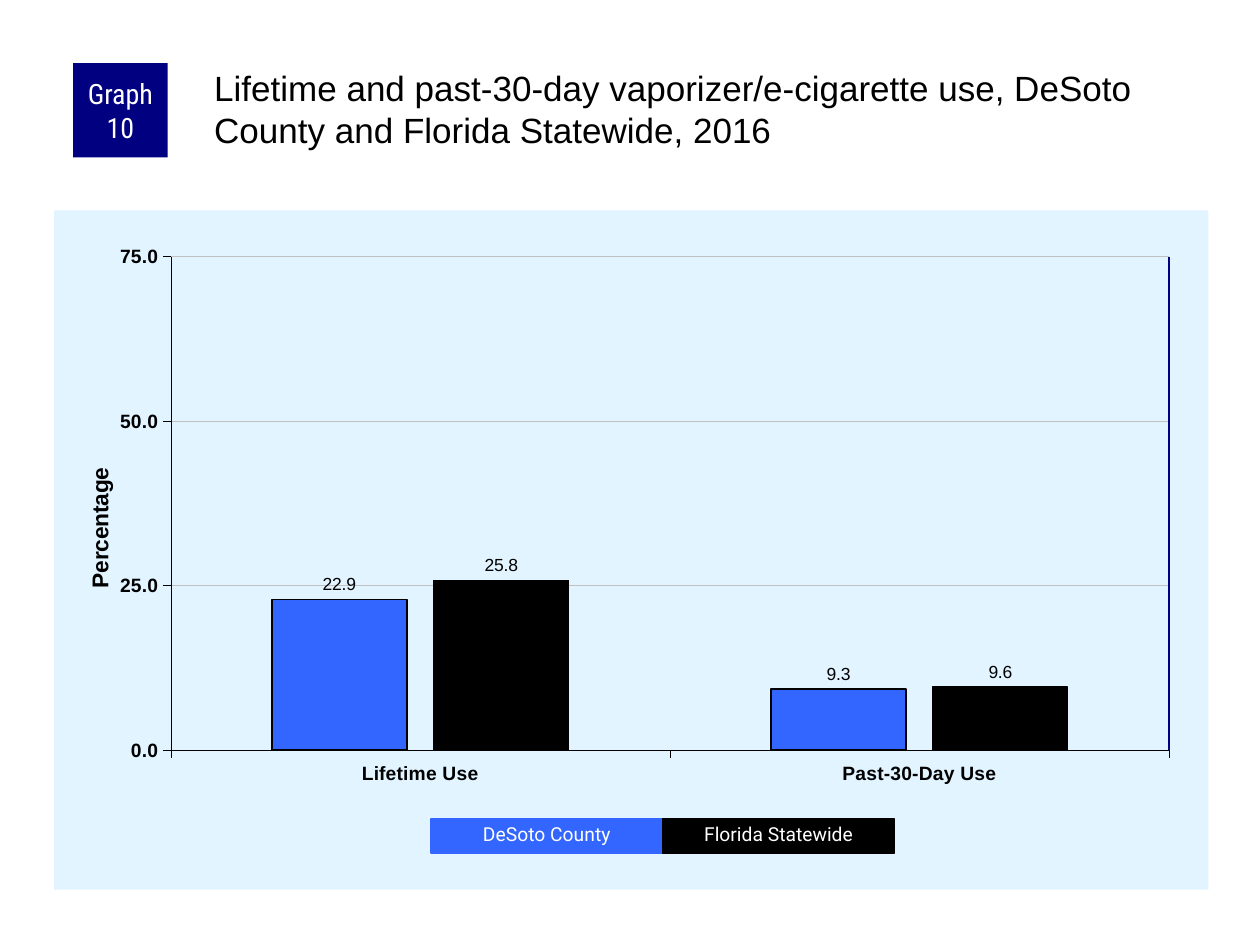
from pptx import Presentation
from pptx.chart.data import CategoryChartData
from pptx.dml.color import RGBColor
from pptx.enum.chart import XL_CHART_TYPE as ChartType, XL_LABEL_POSITION as LabelPos
from pptx.enum.chart import XL_TICK_MARK as Tick
from pptx.enum.shapes import MSO_CONNECTOR as Connector, MSO_SHAPE as Shape
from pptx.enum.text import MSO_ANCHOR as Anchor, PP_ALIGN as Align
from pptx.oxml import parse_xml
from pptx.oxml.ns import nsdecls, qn
from pptx.util import Inches, Pt

NAVY, BLUE, BLACK, WHITE = "000080", "3366FF", "000000", "FFFFFF"
PALE, GRAY = "E1F4FF", "C0C0C0"
SERIES = [
    ("DeSoto County", (22.9, 9.3), BLUE, 1),
    ("Florida Statewide", (25.8, 9.6), BLACK, 0.75),
]
CHART_BOX = (0.43, 1.67, 9.16, 5.39)
PLOT = (0.101, 0.068, 0.865, 0.727)


def rgb(color):
    return RGBColor.from_string(color)


def set_fill(fill, color):
    fill.solid()
    fill.fore_color.rgb = rgb(color)


def set_line(line, color, width):
    line.color.rgb = rgb(color)
    line.width = Pt(width)


def set_font(font, size, color=BLACK, name="Arial", bold=False):
    font.size, font.name, font.bold = Pt(size), name, bold
    font.color.rgb = rgb(color)


def write(sp, text, size, color=BLACK, name="Arial", align=Align.LEFT,
          anchor=Anchor.TOP, insets=(0.1, 0.05, 0.1, 0.05), spacing=None):
    tf = sp.text_frame
    tf.word_wrap = True
    tf.vertical_anchor = anchor
    (tf.margin_left, tf.margin_top,
     tf.margin_right, tf.margin_bottom) = map(Inches, insets)
    p = tf.paragraphs[0]
    p.alignment, p.line_spacing = align, spacing
    r = p.add_run()
    r.text = text
    set_font(r.font, size, color, name)


def add_box(slide, box, fill, line=None):
    sp = slide.shapes.add_shape(Shape.RECTANGLE, *map(Inches, box))
    sp.shadow.inherit = False
    set_fill(sp.fill, fill)
    if line:
        set_line(sp.line, line, 0.75)
    else:
        sp.line.fill.background()
    return sp


def add_line(slide, start, end, color, width):
    line = slide.shapes.add_connector(
        Connector.STRAIGHT, *map(Inches, (*start, *end)))
    set_line(line.line, color, width)
    line._element.spPr.append(parse_xml(f"<a:effectLst {nsdecls('a')}/>"))


def layout_xml(x, y, size=None):
    """Manual layout in fractions of the chart; a size makes it the inner plot."""
    target = '<c:layoutTarget val="inner"/>' if size else ""
    extent = f'<c:w val="{size[0]}"/><c:h val="{size[1]}"/>' if size else ""
    return parse_xml(
        f"<c:layout {nsdecls('c')}><c:manualLayout>{target}"
        f'<c:xMode val="edge"/><c:yMode val="edge"/>'
        f'<c:x val="{x}"/><c:y val="{y}"/>{extent}</c:manualLayout></c:layout>')


def replace_layout(parent, layout, index):
    for old in parent.findall(qn("c:layout")):
        parent.remove(old)
    parent.insert(index, layout)


def style_axis(axis):
    axis.major_tick_mark, axis.minor_tick_mark = Tick.OUTSIDE, Tick.NONE
    set_font(axis.tick_labels.font, 11, bold=True)
    set_line(axis.format.line, BLACK, 0.25)


def style_value_axis(axis):
    style_axis(axis)
    axis.minimum_scale, axis.maximum_scale, axis.major_unit = 0, 75, 25
    axis.has_major_gridlines = True
    set_line(axis.major_gridlines.format.line, GRAY, 0.25)
    title = axis.axis_title
    p = title.text_frame.paragraphs[0]
    r = p.add_run()
    r.text = "Percentage"
    set_font(r.font, 13, bold=True)
    title._element.find(".//" + qn("a:bodyPr")).set("rot", "-5400000")
    replace_layout(title._element, layout_xml(0.024, 0.373), 1)


def style_series(series, color, width):
    set_fill(series.format.fill, color)
    set_line(series.format.line, BLACK, width)
    series.invert_if_negative = False
    labels = series.data_labels
    labels.show_value = True
    labels.position = LabelPos.OUTSIDE_END
    labels.number_format, labels.number_format_is_linked = "0.0", False
    set_font(labels.font, 10)


def add_usage_chart(slide):
    data = CategoryChartData(number_format="0.0")
    data.categories = ["Lifetime Use", "Past-30-Day Use"]
    for name, values, *_ in SERIES:
        data.add_series(name, values)
    chart = slide.shapes.add_chart(
        ChartType.COLUMN_CLUSTERED, *map(Inches, CHART_BOX), data).chart
    chart.has_legend = chart.has_title = False
    set_font(chart.font, 11.5)

    plot = chart.plots[0]
    plot.gap_width, plot.overlap, plot.vary_by_categories = 150, -20, False
    for series, (_, _, color, width) in zip(plot.series, SERIES):
        style_series(series, color, width)
    style_axis(chart.category_axis)
    style_value_axis(chart.value_axis)

    root = chart._chartSpace
    replace_layout(root.chart.plotArea, layout_xml(*PLOT[:2], PLOT[2:]), 0)
    root.chart.addnext(parse_xml(
        f"<c:spPr {nsdecls('c', 'a')}><a:solidFill><a:srgbClr val=\"{PALE}\"/>"
        "</a:solidFill><a:ln><a:noFill/></a:ln></c:spPr>"))


def add_right_edge(slide):
    """Navy line closing the plot area on its right side."""
    left, top, width, height = CHART_BOX
    x = left + (PLOT[0] + PLOT[2]) * width
    y = top + PLOT[1] * height
    add_line(slide, (x, y), (x, y + PLOT[3] * height), NAVY, 1.5)


def add_legend(slide):
    width = 1.84
    for i, (name, _, color, _) in enumerate(SERIES):
        sp = add_box(slide, (3.42 + i * width, 6.5, width, 0.27), color, color)
        write(sp, name, 11, WHITE, "Roboto", align=Align.CENTER, spacing=0.9)


def main():
    prs = Presentation()
    prs.slide_width, prs.slide_height = Inches(10), Inches(7.5)
    slide = prs.slides.add_slide(prs.slide_layouts[6])

    add_usage_chart(slide)
    add_right_edge(slide)
    badge = add_box(slide, (0.58, 0.5, 0.75, 0.75), NAVY)
    write(badge, "Graph 10", 16, WHITE, "Roboto Condensed", align=Align.CENTER,
          anchor=Anchor.MIDDLE, insets=(0.05, 0, 0.05, 0))
    title = slide.shapes.add_textbox(*map(Inches, (1.67, 0.5, 7.92, 0.83)))
    write(title, "Lifetime and past-30-day vaporizer/e-cigarette use, DeSoto "
          "County and Florida Statewide, 2016", 20, insets=(0.03, 0.03, 0, 0))
    add_legend(slide)
    prs.save("out.pptx")


if __name__ == "__main__":
    main()
